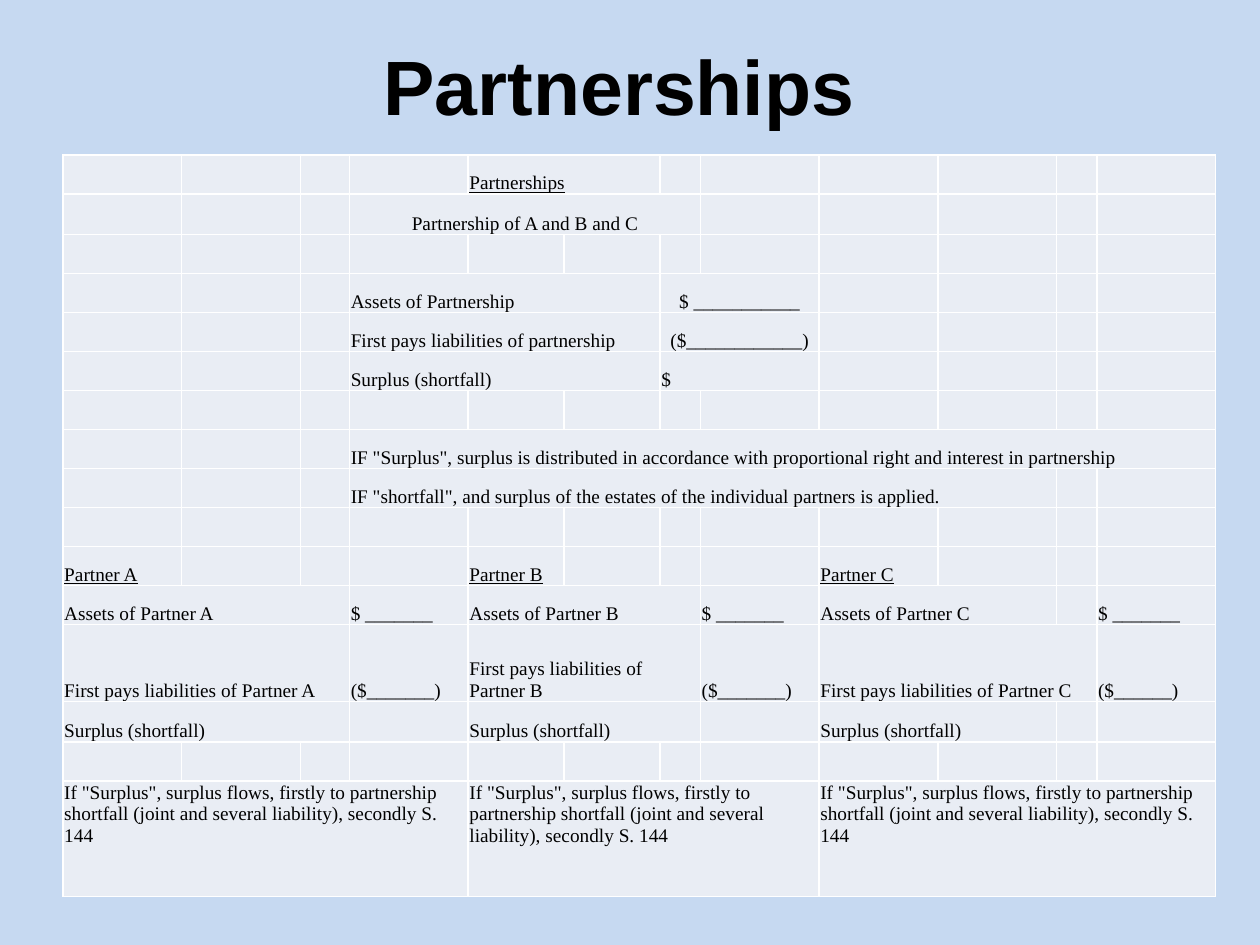
from lxml import etree
from pptx import Presentation
from pptx import util as u
from pptx.dml.color import RGBColor
from pptx.enum import text
from pptx.oxml.ns import qn

COLORS = {"page": "C6D9F1", "cell": "E9EDF4", "line": "FFFFFF", "ink": "000000"}
TITLE_FONT = "Arial"
TABLE_FONT = "Times New Roman"
TEXT_SIZE = 11

COLUMN_WIDTHS = [0.94, 0.94, 0.39, 0.94, 0.76, 0.76, 0.32, 0.94, 0.94, 0.94, 0.32, 0.94]
ROW_HEIGHTS = [0.31, 0.32] + [0.31] * 10 + [0.61, 0.32, 0.31, 0.92]

LEFT, CENTER = text.PP_ALIGN.LEFT, text.PP_ALIGN.CENTER
BOTTOM, TOP = text.MSO_ANCHOR.BOTTOM, text.MSO_ANCHOR.TOP

SURPLUS_RULE = (
    'If "Surplus", surplus flows, firstly to partnership shortfall '
    "(joint and several liability), secondly S. 144"
)

PARTNERS = [
    {"name": "A", "column": 0, "spans": (3, 3, 3), "blank": "($_______)"},
    {"name": "B", "column": 4, "spans": (3, 3, 3), "blank": "($_______)"},
    {"name": "C", "column": 8, "spans": (2, 3, 2), "blank": "($______)"},
]


def color(name):
    return RGBColor.from_string(COLORS[name])


def format_span(span, font, size, bold=False, underline=False):
    span.font.name = font
    span.font.size = u.Pt(size)
    span.font.bold = bold
    span.font.underline = underline
    span.font.color.rgb = color("ink")


def add_title(page, wording, left, top, width, height):
    box = page.shapes.title
    box.left, box.top, box.width, box.height = left, top, width, height
    box.text_frame.text = wording
    box.text_frame.vertical_anchor = text.MSO_ANCHOR.MIDDLE
    para = box.text_frame.paragraphs[0]
    para.alignment = CENTER
    format_span(para.runs[0], TITLE_FONT, 44, bold=True)


def style_cell(cell):
    properties = cell._tc.get_or_add_tcPr()
    for side in ("L", "R", "T", "B"):
        line = etree.SubElement(properties, qn(f"a:ln{side}"), w=str(u.Pt(1)))
        fill = etree.SubElement(line, qn("a:solidFill"))
        etree.SubElement(fill, qn("a:srgbClr"), val=COLORS["line"])
    cell.fill.solid()
    cell.fill.fore_color.rgb = color("cell")
    cell.margin_left = cell.margin_right = cell.margin_top = u.Inches(0.01)
    cell.margin_bottom = 0
    para = cell.text_frame.paragraphs[0]
    etree.SubElement(para._p, qn("a:endParaRPr"), sz=str(TEXT_SIZE * 100))


def write(table, row, column, wording, span=1, align=LEFT, anchor=BOTTOM, underline=False):
    cell = table.cell(row, column)
    if span > 1:
        cell.merge(table.cell(row, column + span - 1))
    cell.vertical_anchor = anchor
    if wording:
        para = cell.text_frame.paragraphs[0]
        para.text = wording
        para.alignment = align
        format_span(para.runs[0], TABLE_FONT, TEXT_SIZE, underline=underline)


def fill_partnership(table):
    write(table, 0, 4, "Partnerships", span=2, underline=True)
    write(table, 1, 3, "Partnership of A and B and C", span=4, align=CENTER)
    amounts = [
        ("Assets of Partnership", "$ ___________", CENTER),
        ("First pays liabilities of partnership", "($____________)", CENTER),
        ("Surplus (shortfall)", "$", LEFT),
    ]
    for row, (label, amount, align) in enumerate(amounts, start=3):
        write(table, row, 3, label, span=3)
        write(table, row, 6, amount, span=2, align=align)
    write(
        table, 7, 3,
        'IF "Surplus", surplus is distributed in accordance with '
        "proportional right and interest in partnership",
        span=9,
    )
    write(
        table, 8, 3,
        'IF "shortfall", and surplus of the estates of the individual partners is applied.',
        span=7,
    )


def fill_partner(table, name, column, spans, blank):
    write(table, 10, column, f"Partner {name}", underline=True)
    lines = [
        (f"Assets of Partner {name}", "$ _______"),
        (f"First pays liabilities of Partner {name}", blank),
        ("Surplus (shortfall)", ""),
    ]
    for row, ((label, amount), span) in enumerate(zip(lines, spans), start=11):
        write(table, row, column, label, span=span)
        write(table, row, column + 3, amount)
    write(table, 15, column, SURPLUS_RULE, span=4, anchor=TOP)


def add_partnership_table(page, left, top, width, height):
    frame = page.shapes.add_table(
        len(ROW_HEIGHTS), len(COLUMN_WIDTHS), left, top, width, height
    )
    table = frame.table
    table.first_row = table.horz_banding = False
    for column, size in zip(table.columns, COLUMN_WIDTHS):
        column.width = int(width * size / sum(COLUMN_WIDTHS))
    for row, size in zip(table.rows, ROW_HEIGHTS):
        row.height = u.Inches(size)
    for cell in table.iter_cells():
        style_cell(cell)
    fill_partnership(table)
    for partner in PARTNERS:
        fill_partner(table, **partner)


def main():
    deck = Presentation()
    deck.slide_width, deck.slide_height = u.Inches(10), u.Inches(7.5)
    page = deck.slides.add_slide(deck.slide_layouts.get_by_name("Title Only"))
    page.background.fill.solid()
    page.background.fill.fore_color.rgb = color("page")
    add_title(
        page, "Partnerships ",
        u.Inches(0.5), u.Inches(0.21), u.Inches(9), u.Inches(0.93),
    )
    add_partnership_table(
        page, u.Inches(0.5), u.Inches(1.23), u.Inches(9.15), u.Inches(5.91)
    )
    deck.save("out.pptx")


if __name__ == "__main__":
    main()
